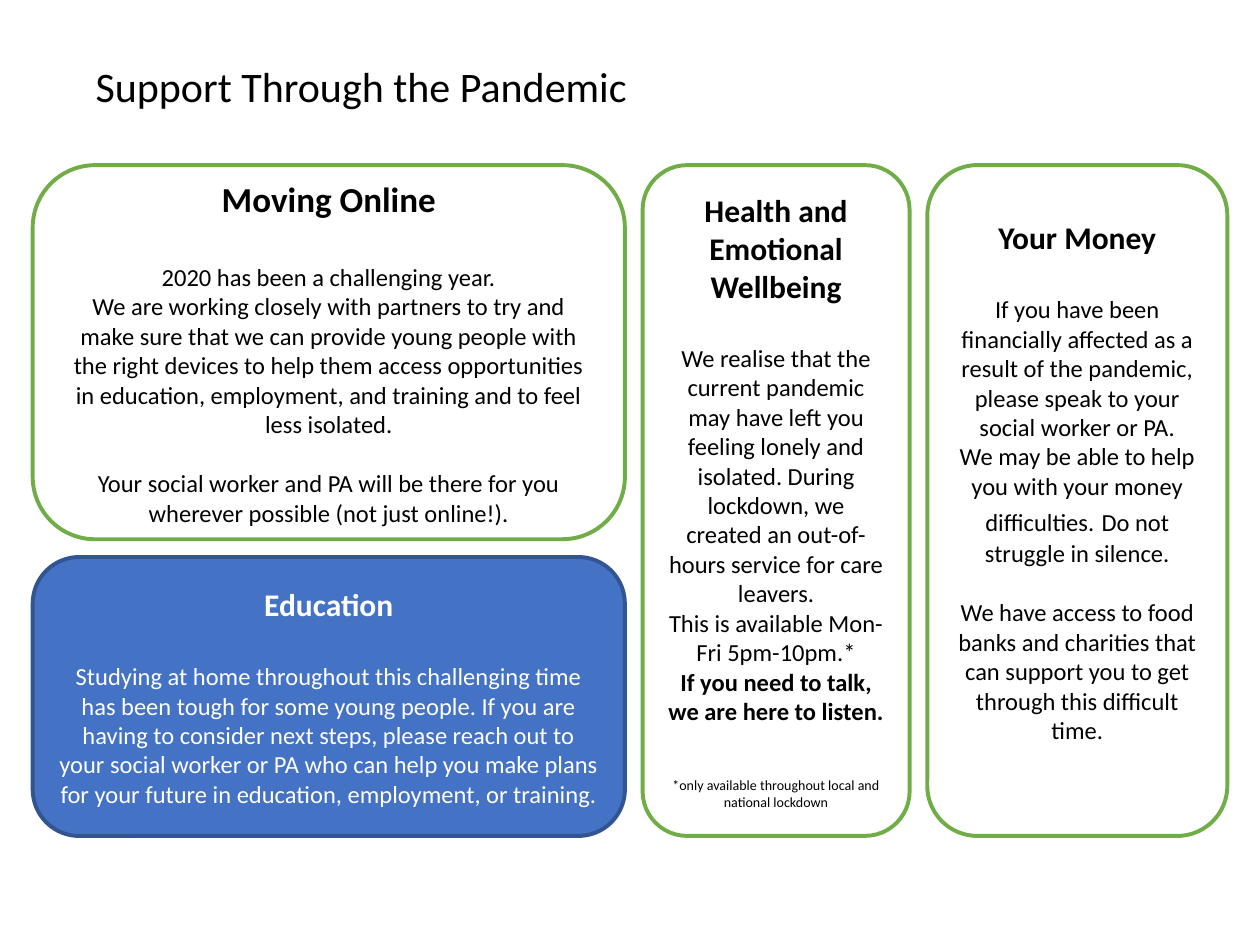
import pptx
import pptx.util
import pptx.dml.color
import pptx.enum.shapes
import pptx.enum.text
from dataclasses import dataclass

Pt = pptx.util.Pt
RGB = pptx.dml.color.RGBColor.from_string


@dataclass(frozen=True)
class Theme:
    font: str = "Calibri"
    black: str = "000000"
    white: str = "FFFFFF"
    green: str = "70AD47"
    blue: str = "4472C4"
    dark_blue: str = "325491"
    title: float = 24
    lead_heading: float = 20
    heading: float = 18
    body: float = 14
    footnote: float = 8
    outline: float = 2.25
    line_height: float = 1.22  # Calibri line height per point of type size


THEME = Theme()


@dataclass(frozen=True)
class Para:
    text: str  # a tuple of (text, size) pairs where sizes differ
    size: float = THEME.body
    bold: bool = False
    gap: float = 0  # space above, in points


def line(size):
    return round(size * THEME.line_height, 1)


def style(font, size, color, bold=False):
    font.name = THEME.font
    font.size = Pt(size)
    font.bold = bold
    font.color.rgb = RGB(color)


def add_title(slide, box, text):
    title = slide.shapes.add_textbox(*map(Pt, box))
    frame = title.text_frame
    frame.word_wrap = True
    frame.vertical_anchor = pptx.enum.text.MSO_ANCHOR.MIDDLE
    paragraph = frame.paragraphs[0]
    paragraph.text = text
    paragraph.line_spacing = 0.9
    style(paragraph.font, THEME.title, THEME.black)


def add_card(slide, box, heading, body, heading_size=THEME.heading,
             fill=THEME.white, outline=THEME.green, ink=THEME.black, extra_bottom=0):
    card = slide.shapes.add_shape(
        pptx.enum.shapes.MSO_SHAPE.ROUNDED_RECTANGLE, *map(Pt, box))
    card.shadow.inherit = False
    card.fill.solid()
    card.fill.fore_color.rgb = RGB(fill)
    card.line.color.rgb = RGB(outline)
    card.line.width = Pt(THEME.outline)

    frame = card.text_frame
    frame.word_wrap = True
    frame.vertical_anchor = pptx.enum.text.MSO_ANCHOR.MIDDLE
    frame.margin_bottom = Pt(3.6 + extra_bottom)
    for index, para in enumerate([Para(heading, heading_size, True), *body]):
        paragraph = frame.add_paragraph() if index else frame.paragraphs[0]
        paragraph.alignment = pptx.enum.text.PP_ALIGN.CENTER
        # The first body paragraph stands one heading line below the heading
        paragraph.space_before = Pt(line(heading_size) if index == 1 else para.gap)
        style(paragraph.font, para.size, ink, para.bold)
        if isinstance(para.text, str):
            paragraph.text = para.text
            continue
        for text, size in para.text:
            run = paragraph.add_run()
            run.text = text
            run.font.size = Pt(size)


def add_support_cards(slide, box):
    left, top, width, height = box
    gap = 10.1
    wide, health = 338.4, 152.6
    online_height = 213.8
    health_left = left + wide + gap
    money_left = health_left + health + gap
    education_top = top + online_height + gap

    # Left column: online support above education
    add_card(slide, (left, top, wide, online_height), "Moving Online", [
        Para("2020 has been a challenging year."),
        Para("We are working closely with partners to try and make sure that we can "
             "provide young people with the right devices to help them access "
             "opportunities in education, employment, and training and to feel less "
             "isolated."),
        Para("Your social worker and PA will be there for you wherever possible "
             "(not just online!).", gap=line(THEME.body)),
    ], heading_size=THEME.lead_heading)
    add_card(slide, (left, education_top, wide, top + height - education_top), "Education", [
        Para("Studying at home throughout this challenging time has been tough for some "
             "young people. If you are having to consider next steps, please reach out "
             "to your social worker or PA who can help you make plans for your future "
             "in education, employment, or training."),
    ], fill=THEME.blue, outline=THEME.dark_blue, ink=THEME.white)

    # Middle column: wellbeing
    add_card(slide, (health_left, top, health, height), "Health and Emotional Wellbeing", [
        Para("We realise that the current pandemic may have left you feeling lonely and "
             "isolated. During lockdown, we created an out-of-hours service for care "
             "leavers."),
        Para("This is available Mon-Fri 5pm-10pm.*"),
        Para("If you need to talk, we are here to listen.", bold=True),
        Para("*only available throughout local and national lockdown",
             THEME.footnote, gap=2 * line(12)),
    ])

    # Right column: money
    add_card(slide, (money_left, top, left + width - money_left, height), "Your Money", [
        Para("If you have been financially affected as a result of the pandemic, please "
             "speak to your social worker or PA."),
        Para((("We may be able to help you with your money difficulties.", THEME.body),
              (" ", THEME.heading),
              ("Do not struggle in silence.", THEME.body))),
        Para("We have access to food banks and charities that can support you to get "
             "through this difficult time.", gap=line(THEME.body)),
    ], extra_bottom=line(THEME.heading))


def main():
    deck = pptx.Presentation()
    deck.slide_width, deck.slide_height = Pt(720), Pt(540)
    slide = deck.slides.add_slide(deck.slide_layouts[6])
    add_title(slide, (47.5, -1.4, 620.6, 104.4), "Support Through the Pandemic")
    add_support_cards(slide, (18.7, 94.4, 682.6, 383.3))
    deck.save("out.pptx")


if __name__ == "__main__":
    main()
